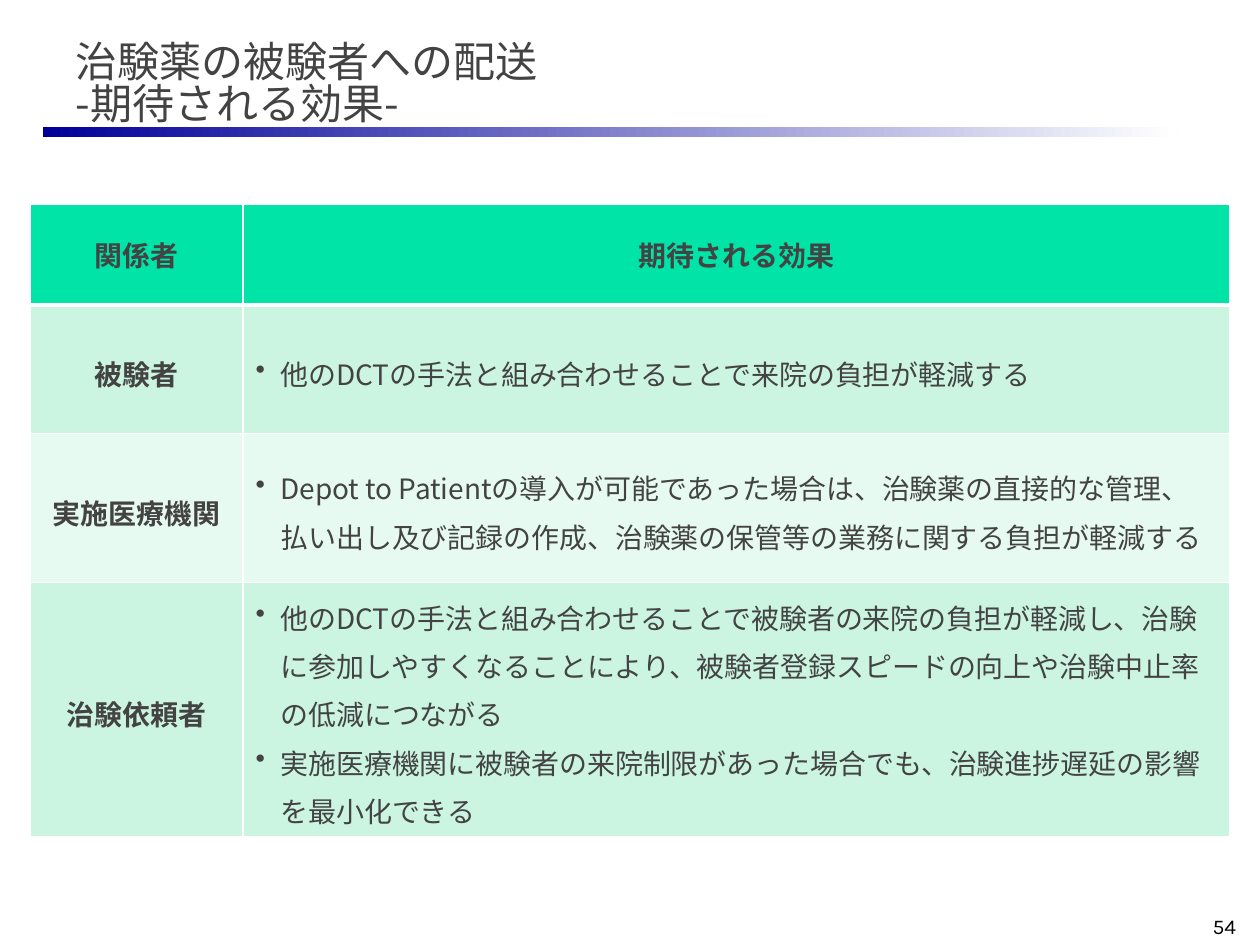
from lxml import etree
from pptx import Presentation
from pptx.dml.color import RGBColor
from pptx.enum.shapes import MSO_SHAPE
from pptx.enum.text import MSO_ANCHOR, MSO_AUTO_SIZE, PP_ALIGN
from pptx.oxml.ns import qn
from pptx.util import Cm, Pt

RECTANGLE = MSO_SHAPE.RECTANGLE
MIDDLE, BOTTOM = MSO_ANCHOR.MIDDLE, MSO_ANCHOR.BOTTOM
LEFT, CENTER, RIGHT = PP_ALIGN.LEFT, PP_ALIGN.CENTER, PP_ALIGN.RIGHT
NO_AUTOFIT = MSO_AUTO_SIZE.NONE
TITLE_ONLY = 5

THEME = {
    "body_font": "Noto Sans CJK JP", "number_font": "Karla",
    "title_size": 24, "table_size": 16, "number_size": 12,
    "text": "434343", "number": "040404", "rule": "000099", "white": "FFFFFF",
    "header": "00E4A8", "bands": ("CCF5E1", "E7FAF1"),
}


def format_paragraph(paragraph, font, size, color, bold=False, **paragraph_format):
    """Apply paragraph settings and one font, for Latin and Japanese, to all runs."""
    for name, value in paragraph_format.items():
        setattr(paragraph, name, value)
    for run in paragraph.runs:
        for name, value in {"name": font, "size": Pt(size), "bold": bold}.items():
            setattr(run.font, name, value)
        run.font.color.rgb = RGBColor.from_string(color)
        latin = run.font._element.find(qn("a:latin"))
        east_asian = etree.Element(qn("a:ea"), typeface=font)
        latin.addnext(east_asian)


def add_borders(cell, widths):
    """Draw white cell borders; widths maps each side to points."""
    properties = cell._tc.get_or_add_tcPr()
    for index, (side, width) in enumerate(widths.items()):
        line = etree.Element(qn(f"a:ln{side}"), w=str(Pt(width)))
        fill = etree.SubElement(line, qn("a:solidFill"))
        etree.SubElement(fill, qn("a:srgbClr"), val=THEME["white"])
        properties.insert(index, line)


presentation = Presentation()
presentation.slide_width, presentation.slide_height = Cm(25.4), Cm(19.05)
slide = presentation.slides.add_slide(presentation.slide_layouts[TITLE_ONLY])

# Title
title = slide.shapes.title
title.left, title.top, title.width, title.height = Cm(1.27), Cm(0.43), Cm(21.64), Cm(2.29)
title.text_frame.text = "治験薬の被験者への配送\v-期待される効果-"
for name, value in {"vertical_anchor": BOTTOM, "auto_size": NO_AUTOFIT, "word_wrap": True}.items():
    setattr(title.text_frame, name, value)
format_paragraph(title.text_frame.paragraphs[0], THEME["body_font"], THEME["title_size"],
                 THEME["text"], alignment=LEFT, line_spacing=0.85)

# Fading rule under the title
rule = slide.shapes.add_shape(RECTANGLE, Cm(0.86), Cm(2.57), Cm(22.86), Cm(0.2))
rule.shadow.inherit = False
rule.line.fill.background()
rule.fill.gradient()
rule.fill.gradient_angle = 0
for stop, color in zip(rule.fill.gradient_stops, (THEME["rule"], THEME["white"])):
    stop.color.rgb = RGBColor.from_string(color)

# Table: first column and header are bold and centred, effects are bulleted
rows = [
    ("関係者", ["期待される効果"]),
    ("被験者", ["他のDCTの手法と組み合わせることで来院の負担が軽減する"]),
    ("実施医療機関", [
        "Depot to Patientの導入が可能であった場合は、治験薬の直接的な管理、"
        "払い出し及び記録の作成、治験薬の保管等の業務に関する負担が軽減する"]),
    ("治験依頼者", [
        "他のDCTの手法と組み合わせることで被験者の来院の負担が軽減し、治験に参加しやすくなる"
        "ことにより、被験者登録スピードの向上や治験中止率の低減につながる",
        "実施医療機関に被験者の来院制限があった場合でも、治験進捗遅延の影響を最小化できる"]),
]
column_widths = (4.29, 19.89)
row_heights = (2.04, 2.59, 3, 4.37)
table = slide.shapes.add_table(len(rows), len(column_widths), Cm(0.61), Cm(4.11),
                               Cm(sum(column_widths)), Cm(sum(row_heights))).table
for column, width in zip(table.columns, column_widths):
    column.width = Cm(width)
for row, height in zip(table.rows, row_heights):
    row.height = Cm(height)

for row_index, (stakeholder, effects) in enumerate(rows):
    is_header = row_index == 0
    fill_color = THEME["header"] if is_header else THEME["bands"][(row_index - 1) % 2]
    for column_index, texts in enumerate(([stakeholder], effects)):
        cell = table.cell(row_index, column_index)
        cell.vertical_anchor = MIDDLE
        cell.fill.solid()
        cell.fill.fore_color.rgb = RGBColor.from_string(fill_color)
        add_borders(cell, {"L": 1, "R": 1, "T": 3 if row_index == 1 else 1,
                           "B": 3 if is_header else 1})
        cell.text_frame.text = "\n".join(texts)
        is_bulleted = column_index == 1 and not is_header
        for paragraph in cell.text_frame.paragraphs:
            format_paragraph(paragraph, THEME["body_font"], THEME["table_size"], THEME["text"],
                             bold=not is_bulleted, alignment=LEFT if is_bulleted else CENTER,
                             line_spacing=1.0 if is_header else 1.2)
            if is_bulleted:
                properties = paragraph._p.get_or_add_pPr()
                properties.set("marL", str(Cm(0.5)))
                properties.set("indent", str(-Cm(0.5)))
                etree.SubElement(properties, qn("a:buChar"), char="•")

# Page number
number_box = slide.shapes.add_textbox(Cm(19.89), Cm(18.21), Cm(5.28), Cm(0.84))
number_box.text_frame.text = "54"
number_box.text_frame.word_wrap = True
number_box.text_frame.vertical_anchor = BOTTOM
format_paragraph(number_box.text_frame.paragraphs[0], THEME["number_font"],
                 THEME["number_size"], THEME["number"], alignment=RIGHT)

presentation.save("out.pptx")
